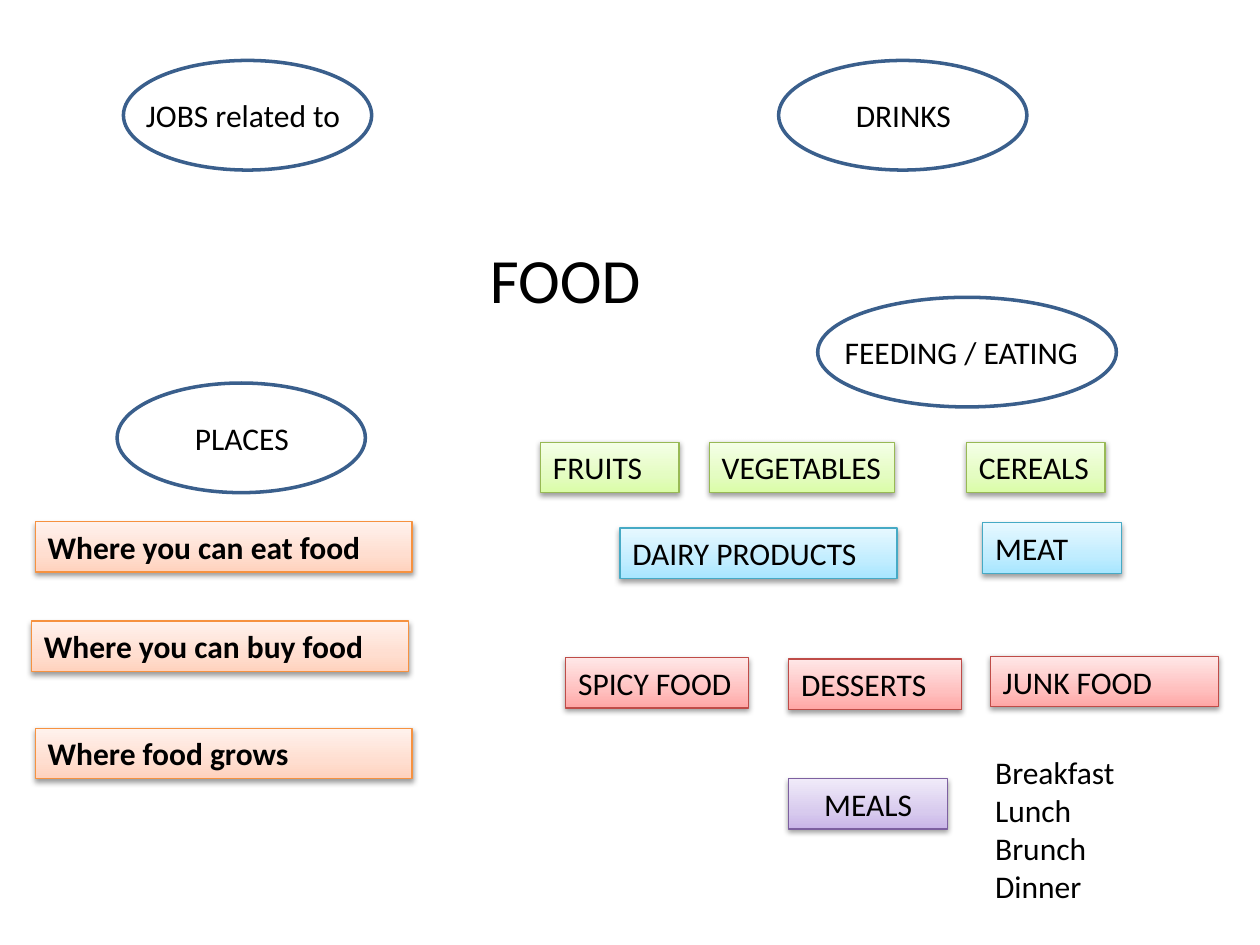
from lxml.etree import SubElement
from pptx import Presentation
from pptx.dml.color import RGBColor
from pptx.enum.shapes import MSO_SHAPE
from pptx.enum.text import MSO_ANCHOR, PP_ALIGN
from pptx.oxml.ns import qn
from pptx.util import Inches, Pt

COLORS = {"text": "000000", "ellipse": "3A5F8C", "shadow": "000000"}
PALETTES = {
    "orange": {"line": "F69240", "stops": ("FFD2BD", "FFDED0", "FFF2ED")},
    "green": {"line": "98B955", "stops": ("DAFDA7", "E4FCC2", "F5FFE7")},
    "blue": {"line": "46AAC5", "stops": ("A7E6FF", "C1EDFF", "E7F8FF")},
    "red": {"line": "BF4C48", "stops": ("FFA6A5", "FFC0BF", "FFE7E7")},
    "purple": {"line": "7D60A0", "stops": ("C9B5E8", "D8CBEE", "F0EAF9")},
}
STOP_POSITIONS = (0, 35, 100)
LABEL_HEIGHT = 0.4
ELLIPSE_HEIGHT = 0.87

TITLE = ("FOOD", (3.58, 1.86, 1.81, 0.71))
MEALS = (["Breakfast", "Lunch", "Brunch", "Dinner"], (7.8, 5.93, 1.73, 1.31))

# text, ellipse left, top, width, label left, label width, alignment
TOPICS = [
    ("JOBS related to", 0.98, 0.48, 1.97, 1.06, 1.81, PP_ALIGN.LEFT),
    ("PLACES", 0.93, 3.04, 1.97, 1.25, 1.34, PP_ALIGN.CENTER),
    ("DRINKS", 6.18, 0.48, 1.97, 6.5, 1.34, PP_ALIGN.CENTER),
    ("FEEDING / EATING", 6.49, 2.36, 2.37, 6.51, 2.24, PP_ALIGN.CENTER),
]
CARDS = {
    "orange": [
        ("Where you can eat food", 0.28, 4.14, 2.99),
        ("Where you can buy food", 0.25, 4.93, 2.99),
        ("Where food grows", 0.28, 5.78, 2.99),
    ],
    "green": [
        ("FRUITS", 4.29, 3.51, 1.1),
        ("VEGETABLES", 5.63, 3.51, 1.47),
        ("CEREALS", 7.67, 3.51, 1.1),
    ],
    "blue": [("DAIRY PRODUCTS", 4.92, 4.19, 2.2), ("MEAT", 7.8, 4.15, 1.1)],
    "red": [
        ("SPICY FOOD", 4.49, 5.22, 1.45),
        ("DESSERTS", 6.26, 5.23, 1.37),
        ("JUNK FOOD", 7.86, 5.21, 1.81),
    ],
    "purple": [("MEALS", 6.26, 6.18, 1.26)],
}


def write_text(shape, lines, size=18, bold=False, align=PP_ALIGN.LEFT):
    frame = shape.text_frame
    frame.word_wrap = True
    frame.vertical_anchor = MSO_ANCHOR.TOP
    for index, line in enumerate(lines):
        para = frame.add_paragraph() if index else frame.paragraphs[0]
        para.alignment = align
        span = para.add_run()
        span.text = line
        span.font.name = "Calibri"
        span.font.size = Pt(size)
        span.font.bold = bold
        span.font.color.rgb = RGBColor.from_string(COLORS["text"])


def add_label(page, lines, place, **text_format):
    box = page.shapes.add_textbox(*map(Inches, place))
    write_text(box, lines, **text_format)


def add_outlined(page, kind, place, color, width):
    shape = page.shapes.add_shape(kind, *map(Inches, place))
    shape.line.color.rgb = RGBColor.from_string(color)
    shape.line.width = Pt(width)
    shape.shadow.inherit = False
    return shape


def set_gradient(shape, colors):
    shape.fill.gradient()
    shape.fill.gradient_angle = 90
    stops = shape.element.spPr.find(qn("a:gradFill")).find(qn("a:gsLst"))
    for stop in list(stops):
        stops.remove(stop)
    for position, color in zip(STOP_POSITIONS, colors):
        stop = SubElement(stops, qn("a:gs"), pos=str(position * 1000))
        SubElement(stop, qn("a:srgbClr"), val=color)


def add_shadow(shape):
    effects = shape.element.spPr.find(qn("a:effectLst"))
    shadow = SubElement(effects, qn("a:outerShdw"), blurRad=str(Pt(3.15)),
                        dist=str(Pt(1.57)), dir="5400000", rotWithShape="0")
    color = SubElement(shadow, qn("a:srgbClr"), val=COLORS["shadow"])
    SubElement(color, qn("a:alpha"), val="38000")


def add_card(page, text, place, palette, **text_format):
    card = add_outlined(page, MSO_SHAPE.RECTANGLE, place, palette["line"], 0.75)
    set_gradient(card, palette["stops"])
    add_shadow(card)
    write_text(card, [text], **text_format)


def main():
    deck = Presentation()
    deck.slide_width, deck.slide_height = Inches(10), Inches(7.5)
    page = deck.slides.add_slide(deck.slide_layouts[6])

    title, place = TITLE
    add_label(page, [title], place, size=36, align=PP_ALIGN.CENTER)

    for text, left, top, width, label_left, label_width, align in TOPICS:
        ellipse = add_outlined(page, MSO_SHAPE.OVAL,
                               (left, top, width, ELLIPSE_HEIGHT), COLORS["ellipse"], 2)
        ellipse.fill.background()
        label_top = top + (ELLIPSE_HEIGHT - LABEL_HEIGHT) / 2
        add_label(page, [text], (label_left, label_top, label_width, LABEL_HEIGHT),
                  align=align)

    for name, cards in CARDS.items():
        align = PP_ALIGN.CENTER if name == "purple" else PP_ALIGN.LEFT
        for text, left, top, width in cards:
            add_card(page, text, (left, top, width, LABEL_HEIGHT), PALETTES[name],
                     bold=name == "orange", align=align)

    meals, place = MEALS
    add_label(page, meals, place)
    deck.save("out.pptx")


if __name__ == "__main__":
    main()
